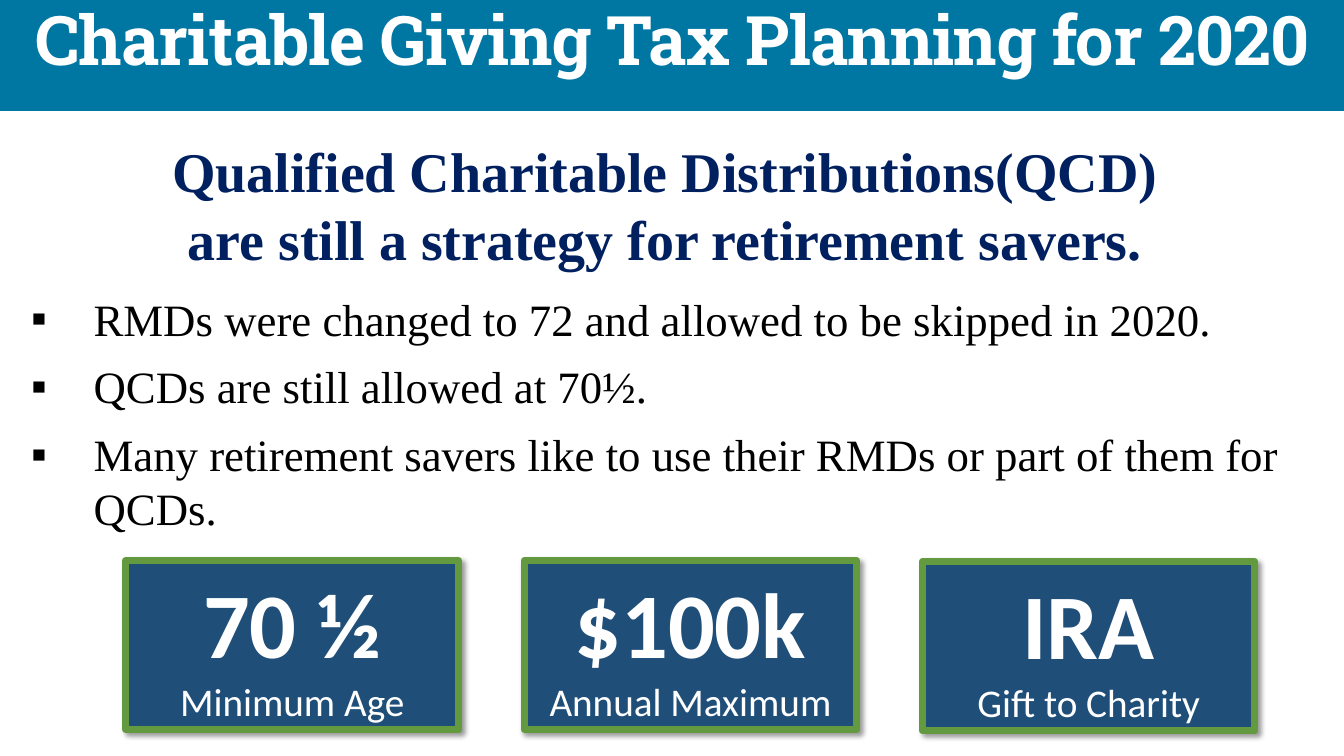
from dataclasses import dataclass

from lxml.etree import SubElement as Sub
from pptx import Presentation
from pptx.dml.color import RGBColor as Rgb
from pptx.enum.shapes import MSO_SHAPE as Form
from pptx.enum.text import MSO_ANCHOR as Anchor, PP_ALIGN as Align
from pptx.oxml.ns import qn
from pptx.util import Emu, Inches, Pt


@dataclass(frozen=True)
class Theme:
    teal: str = "0076A3"
    navy: str = "002060"
    blue: str = "1F4E79"
    green: str = "649A3F"
    white: str = "FFFFFF"
    black: str = "000000"
    slab: str = "Roboto Slab"
    serif: str = "Times New Roman"
    sans: str = "Calibri"
    title: float = 48.8
    head: float = 40
    body: float = 32
    big: float = 66
    small: float = 28


@dataclass(frozen=True)
class Box:
    """Place and size in columns and rows of the grid."""
    col: float
    row: float
    wide: float
    high: float


@dataclass(frozen=True)
class Style:
    face: str
    size: float
    tint: str
    bold: bool = False


@dataclass(frozen=True)
class Card:
    value: str
    label: str
    row: float


# Grid and theme
COLS, ROWS = 160, 90
LOOK = Theme()

deck = Presentation()
deck.slide_width, deck.slide_height = Inches(40 / 3), Inches(7.5)
slide = deck.slides.add_slide(deck.slide_layouts[6])
STEP_X, STEP_Y = deck.slide_width / COLS, deck.slide_height / ROWS


def place(box: Box) -> list[Emu]:
    return [Emu(round(n)) for n in (box.col * STEP_X, box.row * STEP_Y,
                                    box.wide * STEP_X, box.high * STEP_Y)]


def panel(box: Box, fill: str):
    shape = slide.shapes.add_shape(Form.RECTANGLE, *place(box))
    shape.shadow.inherit = False
    shape.fill.solid()
    shape.fill.fore_color.rgb = Rgb.from_string(fill)
    shape.line.fill.background()
    shape.text_frame.word_wrap = True
    return shape


def label(box: Box):
    frame = slide.shapes.add_textbox(*place(box)).text_frame
    frame.word_wrap = True
    return frame


def write(frame, lines: list[str], styles: list[Style], align: Align) -> None:
    for i, (line, style) in enumerate(zip(lines, styles)):
        para = frame.paragraphs[0] if i == 0 else frame.add_paragraph()
        para.text = line
        para.alignment = align
        para.font.name = style.face
        para.font.size = Pt(style.size)
        para.font.bold = style.bold
        para.font.color.rgb = Rgb.from_string(style.tint)


def shade(shape) -> None:
    effects = shape._element.spPr.find(qn("a:effectLst"))
    cast = Sub(effects, qn("a:outerShdw"), blurRad=str(Pt(4)),
               dist=str(Pt(3)), dir="2700000", algn="tl", rotWithShape="0")
    tint = Sub(cast, qn("a:srgbClr"), val=LOOK.black)
    Sub(tint, qn("a:alpha"), val="40000")


# Title banner
banner = panel(Box(0, 0, COLS, 13.2), LOOK.teal).text_frame
banner.vertical_anchor = Anchor.TOP
banner.margin_top = Inches(0.19)
write(banner, ["Charitable Giving Tax Planning for 2020"],
      [Style(LOOK.slab, LOOK.title, LOOK.white, True)], Align.CENTER)
name = banner.paragraphs[0]
name.line_spacing = 0.7
name.runs[0]._r.get_or_add_rPr().set("spc", "-60")

# Headline
write(label(Box(0, 15.72, 158.3, 17.4)),
      ["Qualified Charitable Distributions(QCD)\v"
       "are still a strategy for retirement savers."],
      [Style(LOOK.serif, LOOK.head, LOOK.navy, True)], Align.CENTER)

# Bullet points
POINTS = [
    "RMDs were changed to 72 and allowed to be skipped in 2020.",
    "QCDs are still allowed at 70½.",
    "Many retirement savers like to use their RMDs or part of them for QCDs.",
]
body = label(Box(2.52, 34.08, 157.48, 30.48))
for i, point in enumerate(POINTS):
    para = body.paragraphs[0] if i == 0 else body.add_paragraph()
    if i:
        para.space_before = Pt(10)
    props = para._p.get_or_add_pPr()
    props.set("marL", str(Inches(0.62)))
    props.set("indent", str(-Inches(0.62)))
    Sub(props, qn("a:buFont"), typeface="Arial")
    Sub(props, qn("a:buChar"), char="▪")
    para.text = point
    para.font.name = LOOK.serif
    para.font.size = Pt(LOOK.body)
    para.font.color.rgb = Rgb.from_string(LOOK.black)

# Fact cards
CARDS = [
    Card("70 ½", "Minimum Age", 66.72),
    Card("$100k", "Annual Maximum", 66.72),
    Card("IRA", "Gift to Charity", 66.84),
]
FIRST, PITCH = 15, 47.4
for i, card in enumerate(CARDS):
    tile = panel(Box(FIRST + i * PITCH, card.row, 39.6, 20.16), LOOK.blue)
    tile.line.color.rgb = Rgb.from_string(LOOK.green)
    tile.line.width = Pt(5)
    shade(tile)
    tile.text_frame.vertical_anchor = Anchor.MIDDLE
    write(tile.text_frame, [card.value, card.label],
          [Style(LOOK.sans, LOOK.big, LOOK.white, True),
           Style(LOOK.sans, LOOK.small, LOOK.white)], Align.CENTER)

deck.save("out.pptx")
